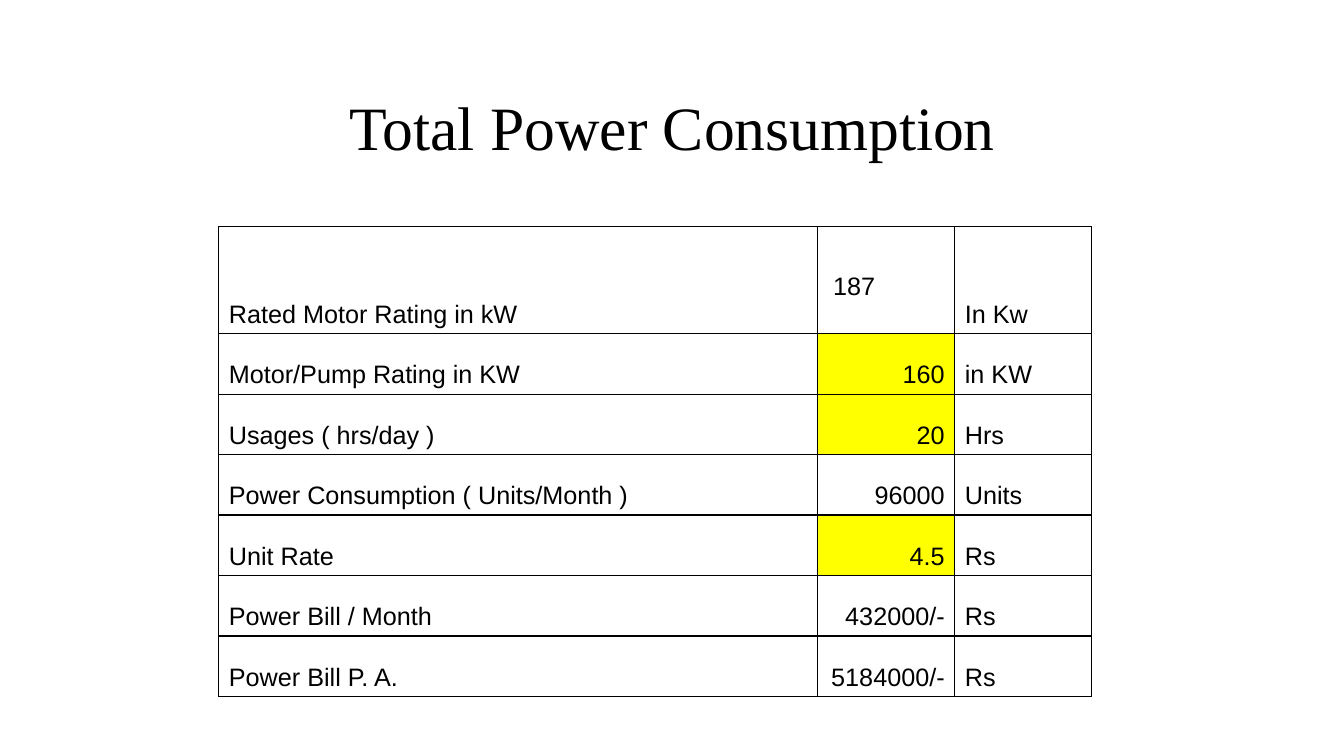
from lxml.etree import SubElement
from pptx import Presentation
from pptx.dml.color import RGBColor
from pptx.enum.text import MSO_ANCHOR as Anchor, PP_ALIGN as Align
from pptx.oxml.ns import qn
from pptx.util import Pt

SCALE = 9144
BLACK, WHITE, YELLOW = "000000", "FFFFFF", "FFFF00"
COLUMN_ALIGNS = (Align.LEFT, Align.RIGHT, Align.LEFT)
COLUMN_WIDTHS = (594, 136, 136)
FIRST_ROW_HEIGHT, ROW_HEIGHT = 106, 60
ROWS = [
    ("Rated Motor Rating in kW", "187", "In Kw"),
    ("Motor/Pump Rating in KW", "160", "in KW"),
    ("Usages ( hrs/day )", "20", "Hrs"),
    ("Power Consumption ( Units/Month )", "96000", "Units"),
    ("Unit Rate", "4.5", "Rs"),
    ("Power Bill / Month", "432000/-", "Rs"),
    ("Power Bill P. A.", "5184000/-", "Rs"),
]
INPUT_VALUES = {"160", "20", "4.5"}


def px(length):
    """Turn px into EMU."""
    return length * SCALE


def color(value):
    """Turn a hex string into a colour."""
    return RGBColor.from_string(value)


class PowerSlide:
    """Holds the style and the current slide."""

    title_font, title_size = "Times New Roman", 44
    table_font, table_size = "Arial", 18

    def __init__(self, deck):
        self.page = deck.slides.add_slide(deck.slide_layouts[6])

    def set_text(self, frame, text, font, size, align):
        """Set one paragraph of text and format its run."""
        frame.text = text
        para = frame.paragraphs[0]
        para.alignment = align
        span = para.runs[0]
        span.font.name, span.font.size = font, Pt(size)
        span.font.color.rgb = color(BLACK)

    def title(self, text, left, top, width, height):
        """Add the centred title."""
        box = self.page.shapes.add_textbox(px(left), px(top), px(width), px(height))
        frame = box.text_frame
        frame.word_wrap = True
        frame.vertical_anchor = Anchor.MIDDLE
        self.set_text(frame, text, self.title_font, self.title_size, Align.CENTER)

    def borders(self, cell):
        """Draw a thin black line on each side of a cell."""
        properties = cell._tc.get_or_add_tcPr()
        for side in ("lnL", "lnR", "lnT", "lnB"):
            line = SubElement(properties, qn(f"a:{side}"), w=str(Pt(1)))
            fill = SubElement(line, qn("a:solidFill"))
            SubElement(fill, qn("a:srgbClr"), val=BLACK)

    def table(self, rows, left, top, widths, heights):
        """Add the bordered table and return it."""
        table = self.page.shapes.add_table(
            len(rows), len(widths), px(left), px(top), px(sum(widths)), px(sum(heights))
        ).table
        for column, width in zip(table.columns, widths):
            column.width = px(width)
        for row, height, texts in zip(table.rows, heights, rows):
            row.height = px(height)
            for cell, text, align in zip(row.cells, texts, COLUMN_ALIGNS):
                self.set_text(cell.text_frame, text, self.table_font, self.table_size, align)
                cell.vertical_anchor = Anchor.BOTTOM
                self.borders(cell)
                cell.fill.solid()
                cell.fill.fore_color.rgb = color(YELLOW if text in INPUT_VALUES else WHITE)
        return table


def main():
    """Build and save the slide."""
    deck = Presentation()
    deck.slide_width, deck.slide_height = px(1333), px(750)
    slide = PowerSlide(deck)
    slide.title("Total Power Consumption", 67, 50, 1200, 150)
    heights = [FIRST_ROW_HEIGHT] + [ROW_HEIGHT] * (len(ROWS) - 1)
    table = slide.table(ROWS, 217, 225, COLUMN_WIDTHS, heights)
    rated_power = table.cell(0, 1)
    rated_power.margin_right, rated_power.margin_bottom = px(79), px(33)
    deck.save("out.pptx")


if __name__ == "__main__":
    main()
